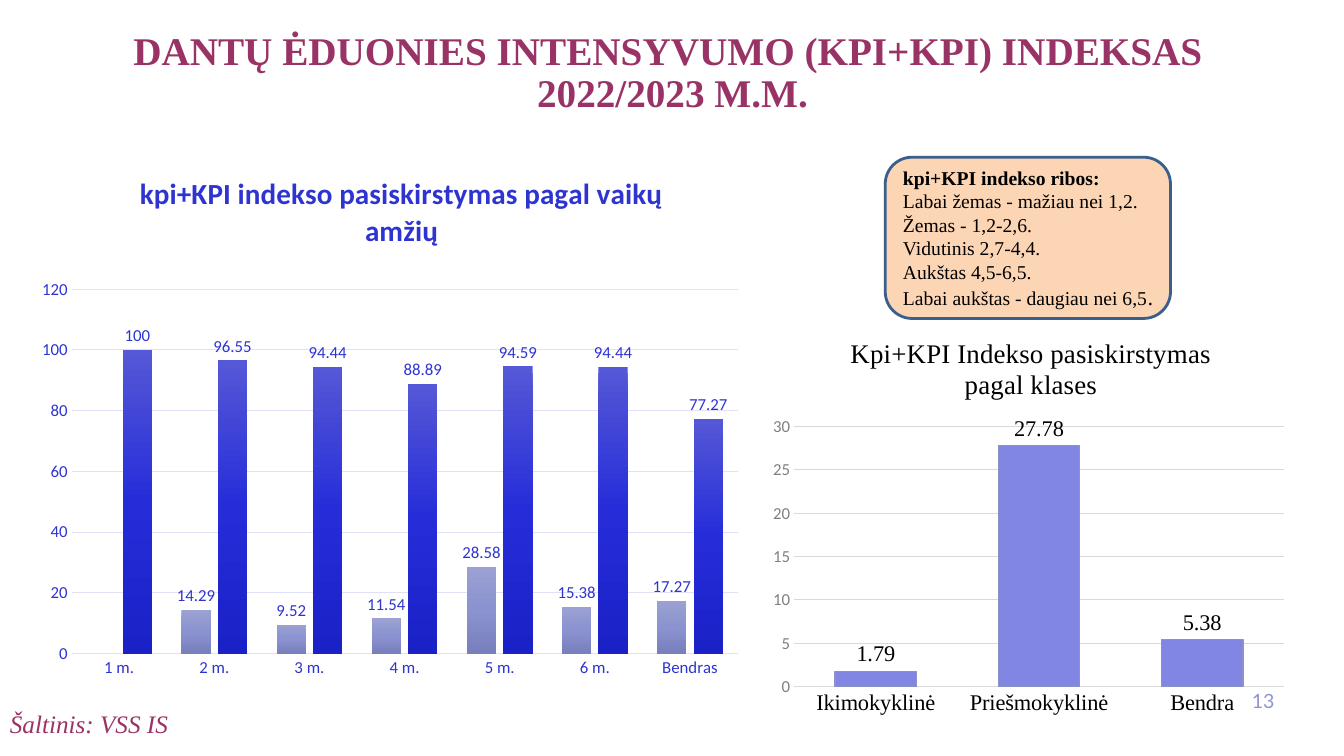
import pptx
import pptx.util
import pptx.chart.data
import pptx.dml.color
import pptx.enum.chart
import pptx.enum.shapes
import pptx.enum.text
import pptx.oxml
import pptx.oxml.ns

Inches, Pt = pptx.util.Inches, pptx.util.Pt
RGB = pptx.dml.color.RGBColor
Align, Anchor = pptx.enum.text.PP_ALIGN, pptx.enum.text.MSO_ANCHOR
Enum = pptx.enum.chart
qn = pptx.oxml.ns.qn

PLUM = RGB(0x99, 0x33, 0x66)
BLACK = RGB(0, 0, 0)
BLUE = RGB(0x2E, 0x34, 0xD0)
PALE = RGB(0xE0, 0xE0, 0xF8)
GREY = RGB(0x80, 0x80, 0x80)
SILVER = RGB(0xD9, 0xD9, 0xD9)
PEACH = RGB(0xFC, 0xD5, 0xB5)
NAVY = RGB(0x3A, 0x5F, 0x8C)
LILAC = RGB(0x81, 0x85, 0xE3)
EDGE = RGB(0x8A, 0x92, 0xC8)
MIST = RGB(0x8E, 0x96, 0xCD)
SOFT = [RGB(0x9B, 0xA1, 0xD2), RGB(0x8A, 0x93, 0xCF), RGB(0x77, 0x7F, 0xBC)]
DEEP = [RGB(0x55, 0x58, 0xD7), RGB(0x26, 0x2D, 0xD8), RGB(0x1A, 0x21, 0xC7)]
SERIF, SANS = "Times New Roman", "Calibri"


def write(para, text, size=14, face=SERIF, color=BLACK, bold=False, slant=False, align=Align.LEFT):
    para.alignment = align
    for num, line in enumerate(text.split("\n")):
        if num:
            para.add_line_break()
        run = para.add_run()
        run.text = line
        font = run.font
        font.size, font.name, font.bold, font.italic = Pt(size), face, bold, slant
        font.color.rgb = color


def place(node, after, **frac):
    for old in node.findall(qn("c:layout")):
        node.remove(old)
    parts = "".join(f'<c:{key} val="{val}"/>' for key, val in frac.items())
    xml = f'<c:layout {pptx.oxml.ns.nsdecls("c")}><c:manualLayout>{parts}</c:manualLayout></c:layout>'
    layout = pptx.oxml.parse_xml(xml)
    if after is None:
        node.insert(0, layout)
    else:
        after.addnext(layout)


deck = pptx.Presentation()
deck.slide_width, deck.slide_height = Inches(13.33), Inches(7.5)
slide = deck.slides.add_slide(deck.slide_layouts[6])

charts = [
    dict(at=(0.28, 1.7, 7.18, 5.09), title=["kpi+KPI indekso pasiskirstymas pagal vaikų", "amžių"],
         head=dict(size=20.8, face=SANS, color=BLUE, bold=True), spot=(0.15, 0), plot=(0.23, 0.71),
         cats=["1 m.", "2 m.", "3 m.", "4 m.", "5 m.", "6 m.", "Bendras"],
         rows=[[None, 14.29, 9.52, 11.54, 28.58, 15.38, 17.27],
               [100, 96.55, 94.44, 88.89, 94.59, 94.44, 77.27]],
         fills=[SOFT, DEEP], top=120, step=20, grid=PALE, vals=BLUE, label=(12, SANS, BLUE)),
    dict(at=(7.56, 3.2, 5.28, 3.97), title=["Kpi+KPI Indekso pasiskirstymas", "pagal klases"],
         head=dict(size=19.2), spot=(0.16, 0.03), plot=(0.26, 0.65),
         cats=["Ikimokyklinė", "Priešmokyklinė", "Bendra"], rows=[[1.79, 27.78, 5.38]],
         fills=[LILAC], top=30, step=5, grid=SILVER, vals=GREY, label=(16, SERIF, BLACK)),
]

for item in charts:
    data = pptx.chart.data.CategoryChartData()
    data.categories = item["cats"]
    for num, row in enumerate(item["rows"], 1):
        data.add_series(f"Series {num}", row)
    chart = slide.shapes.add_chart(Enum.XL_CHART_TYPE.COLUMN_CLUSTERED,
                                   *map(Inches, item["at"]), data).chart
    chart.has_legend = False
    chart.font.size, chart.font.name = Pt(10), SANS
    chart.has_title = True
    frame = chart.chart_title.text_frame
    for num, line in enumerate(item["title"]):
        para = frame.add_paragraph() if num else frame.paragraphs[0]
        write(para, line, align=Align.CENTER, **item["head"])
    title = chart.element.find(".//" + qn("c:title"))
    left, top = item["spot"]
    place(title, title.find(qn("c:tx")), xMode="edge", yMode="edge", x=left, y=top)
    top, high = item["plot"]
    area = chart.element.find(".//" + qn("c:plotArea"))
    place(area, None, layoutTarget="inner", xMode="edge", yMode="edge", x=0.06, y=top, w=0.92, h=high)

    cat, val = chart.category_axis, chart.value_axis
    for axis, look in ((cat, item["label"]), (val, (12, SANS, item["vals"]))):
        axis.major_tick_mark = Enum.XL_TICK_MARK.NONE
        font = axis.tick_labels.font
        font.size, font.name, font.color.rgb = Pt(look[0]), look[1], look[2]
    val.minimum_scale, val.maximum_scale, val.major_unit = 0, item["top"], item["step"]
    val.format.line.fill.background()
    for line in (cat.format.line, val.major_gridlines.format.line):
        line.color.rgb, line.width = item["grid"], Pt(0.75)

    bars = chart.plots[0]
    bars.gap_width, bars.overlap, bars.vary_by_categories = 100, -24, False
    for series, hue in zip(bars.series, item["fills"]):
        fill = series.format.fill
        if isinstance(hue, list):
            fill.gradient()
            fill.gradient_angle = 270
            stops = chart.element.findall(".//" + qn("a:gsLst"))[-1]
            for stop in list(stops):
                stops.remove(stop)
            for pos, tint in zip((0, 50000, 100000), hue):
                stops.append(pptx.oxml.parse_xml(
                    f'<a:gs {pptx.oxml.ns.nsdecls("a")} pos="{pos}"><a:srgbClr val="{tint}"/></a:gs>'))
        else:
            fill.solid()
            fill.fore_color.rgb = hue
            series.format.line.color.rgb, series.format.line.width = EDGE, Pt(0.75)
        tags = series.data_labels
        tags.show_value, tags.position = True, Enum.XL_LABEL_POSITION.OUTSIDE_END
        font = tags.font
        font.size, font.name, font.color.rgb = Pt(item["label"][0]), *item["label"][1:]

texts = [
    ((0.21, 0.58, 12.92, 0.62), "DANTŲ ĖDUONIES INTENSYVUMO (KPI+KPI) INDEKSAS \n2022/2023 M.M.",
     dict(size=28, color=PLUM, bold=True, align=Align.CENTER), Anchor.BOTTOM, 0.9),
    ((0, 6.98, 6.3, 0.38), "Šaltinis: VSS IS", dict(size=18, color=PLUM, slant=True), Anchor.TOP, 1.0),
    ((12.22, 6.79, 0.52, 0.4), "13", dict(face="Lato", color=MIST, align=Align.RIGHT), Anchor.TOP, 1.0),
]
for at, text, look, anchor, space in texts:
    frame = slide.shapes.add_textbox(*map(Inches, at)).text_frame
    frame.word_wrap, frame.vertical_anchor = True, anchor
    para = frame.paragraphs[0]
    para.line_spacing = space
    write(para, text, **look)

box = slide.shapes.add_shape(pptx.enum.shapes.MSO_SHAPE.ROUNDED_RECTANGLE,
                             *map(Inches, (8.78, 1.56, 2.83, 1.6)))
box.shadow.inherit = False
box.fill.solid()
box.fill.fore_color.rgb = PEACH
box.line.color.rgb, box.line.width = NAVY, Pt(2)
frame = box.text_frame
frame.word_wrap, frame.vertical_anchor = True, Anchor.MIDDLE
frame.margin_right = 0
bounds = ["kpi+KPI indekso ribos:", "Labai žemas - mažiau nei 1,2.", "Žemas - 1,2-2,6.",
          "Vidutinis 2,7-4,4.", "Aukštas 4,5-6,5.", "Labai aukštas - daugiau nei 6,5"]
for num, text in enumerate(bounds):
    para = frame.add_paragraph() if num else frame.paragraphs[0]
    write(para, text, bold=num == 0)
write(para, ".", size=16)

deck.save("out.pptx")
